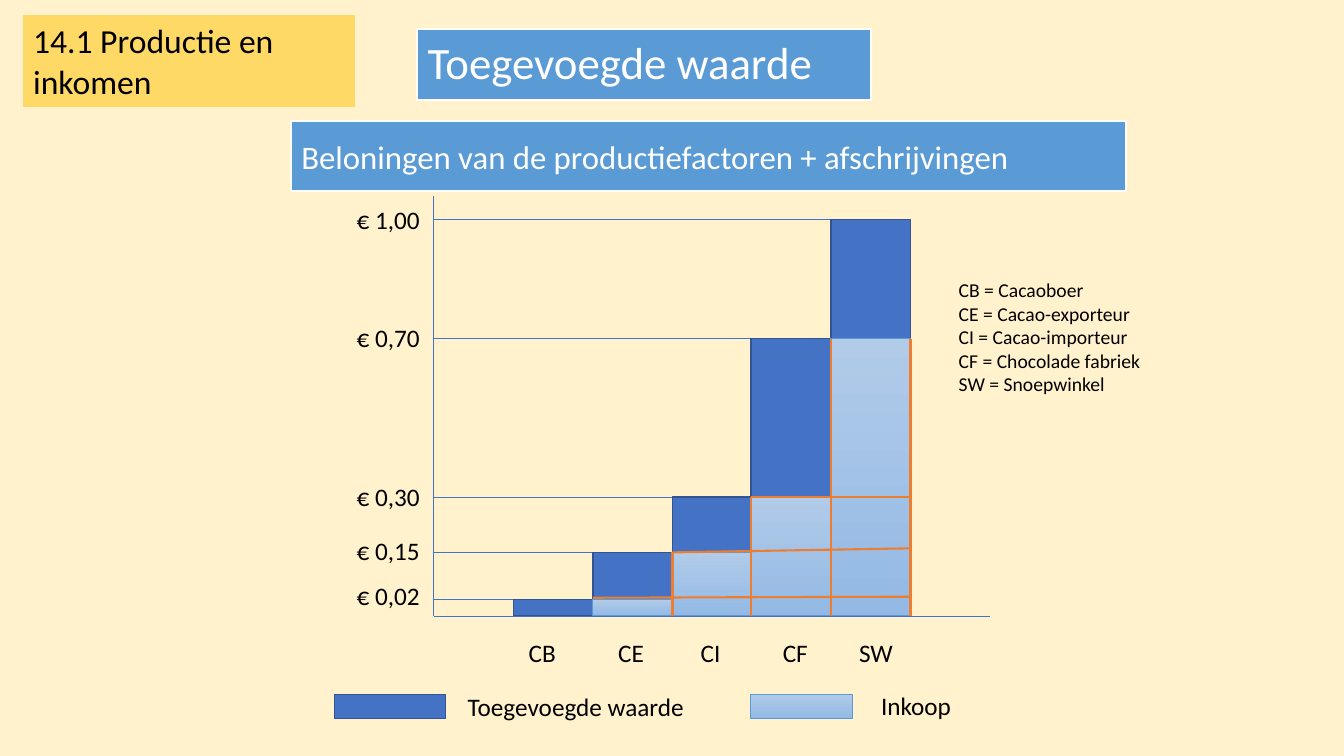
from lxml.etree import SubElement
from pptx import Presentation
from pptx.dml.color import RGBColor
from pptx.enum.shapes import MSO_CONNECTOR as Connector, MSO_SHAPE as Shape
from pptx.enum.text import MSO_ANCHOR as Anchor, MSO_AUTO_SIZE as AutoSize, PP_ALIGN as Align
from pptx.oxml.ns import qn
from pptx.util import Pt

PX = 9144
FONT = "Calibri"
HEX = {
    "cream": "FFF2CC", "yellow": "FFD966", "black": "000000", "white": "FFFFFF",
    "sky": "5B9BD5", "blue": "4472C4", "navy": "325491", "orange": "ED7D31",
    "pale_top": "B1CBE9", "pale_bottom": "93B9E4",
}
COLOR = {name: RGBColor.from_string(value) for name, value in HEX.items()}


def draw_lines(lines, color, width):
    for ends in lines:
        line = page.shapes.add_connector(Connector.STRAIGHT, *[n * PX for n in ends])
        line.line.color.rgb = COLOR[color]
        line.line.width = Pt(width)
        SubElement(line.element.spPr, qn("a:effectLst"))


def write(box, lines, size, color="black", anchor=Anchor.TOP, fit=AutoSize.NONE):
    frame = box.text_frame
    frame.word_wrap = True
    frame.auto_size = fit
    frame.vertical_anchor = anchor
    for index, text in enumerate(lines):
        para = frame.add_paragraph() if index else frame.paragraphs[0]
        para.alignment = Align.LEFT
        span = para.add_run()
        span.text = text
        span.font.name = FONT
        span.font.size = Pt(size)
        span.font.color.rgb = COLOR[color]


deck = Presentation()
deck.slide_width, deck.slide_height = 1333 * PX, 750 * PX
page = deck.slides.add_slide(deck.slide_layouts[5])
page.background.fill.solid()
page.background.fill.fore_color.rgb = COLOR["cream"]

title = page.shapes.title
title.left, title.top, title.width, title.height = [n * PX for n in (414, 29, 450, 70)]
title.fill.solid()
title.fill.fore_color.rgb = COLOR["sky"]
title.line.color.rgb = COLOR["white"]
title.line.width = Pt(1.5)
write(title, ["Toegevoegde waarde"], 32, "white", Anchor.MIDDLE)
title.text_frame.paragraphs[0].line_spacing = 0.9

axis, base = 430, 611
edges = [round(509 + 78.8 * step) for step in range(6)]
levels = [595, 548, 493, 336, 218]
right = edges[-1]
axes = [(axis, base, axis, 194), (axis, base, 982, base)]
guides = [(axis, level, edges[4] if level == 336 else right, level) for level in levels]
draw_lines(axes + guides, "blue", 0.5)

added = [(332, 689, 110, 24)]
purchased = [(744, 689, 101, 24)]
for index, top in enumerate(levels):
    left, width = edges[index], edges[index + 1] - edges[index]
    below = levels[index - 1] if index else base
    added.append((left, top, width, below - top))
    if index:
        purchased.append((left, below, width, base - below))

for place in added + purchased:
    bar = page.shapes.add_shape(Shape.RECTANGLE, *[n * PX for n in place])
    bar.shadow.inherit = False
    if place in added:
        bar.fill.solid()
        bar.fill.fore_color.rgb = COLOR["blue"]
        bar.line.color.rgb = COLOR["navy"]
        bar.line.width = Pt(1)
    else:
        bar.fill.gradient()
        bar.fill.gradient_angle = 270
        for stop, shade in zip(bar.fill.gradient_stops, ("pale_top", "pale_bottom")):
            stop.color.rgb = COLOR[shade]
        bar.line.color.rgb = COLOR["sky"]
        bar.line.width = Pt(0.5)

slopes = [(588, 593, 902, 592), (667, 548, right, 544), (745, 493, right, 493)]
sides = [(edge, top, edge, base) for edge, top in zip(edges[2:], levels[1:4] + [336])]
draw_lines(slopes + sides, "orange", 1.5)

prices = ["€ 0,02", "€ 0,15", "€ 0,30", "€ 0,70", "€ 1,00"]
labels = [((344, top, 87, 40), [price], 18)
          for top, price in zip((571, 526, 473, 315, 198), prices)]
labels += [
    ((454, 681, 314, 40), ["Toegevoegde waarde"], 18),
    ((864, 680, 126, 40), ["Inkoop"], 18),
    ((941, 271, 214, 128), ["CB = Cacaoboer", "CE = Cacao-exporteur", "CI = Cacao-importeur",
                            "CF = Chocolade fabriek", "SW = Snoepwinkel"], 14),
    ((509, 627, 394, 40), ["\tCB\tCE\tCI\tCF\tSW"], 18),
]
for place, lines, size in labels:
    label = page.shapes.add_textbox(*[n * PX for n in place])
    write(label, lines, size, fit=AutoSize.SHAPE_TO_FIT_TEXT)

stages = label.text_frame.paragraphs[0]
tabs = SubElement(stages._p.get_or_add_pPr(), qn("a:tabLst"))
for center in (19, 107, 186, 270, 350):
    SubElement(tabs, qn("a:tab"), pos=str(center * PX), algn="ctr")

rewards = page.shapes.add_shape(Shape.RECTANGLE, *[n * PX for n in (289, 120, 828, 70)])
rewards.shadow.inherit = False
rewards.fill.solid()
rewards.fill.fore_color.rgb = COLOR["sky"]
rewards.line.color.rgb = COLOR["white"]
rewards.line.width = Pt(1.5)
write(rewards, ["Beloningen van de productiefactoren + afschrijvingen"], 23.4, "white", Anchor.MIDDLE)

chapter = page.shapes.add_shape(Shape.RECTANGLE, *[n * PX for n in (23, 15, 329, 91)])
chapter.shadow.inherit = False
chapter.fill.solid()
chapter.fill.fore_color.rgb = COLOR["yellow"]
chapter.line.fill.background()
write(chapter, ["14.1 Productie en inkomen"], 24, fit=AutoSize.SHAPE_TO_FIT_TEXT)

deck.save("out.pptx")
